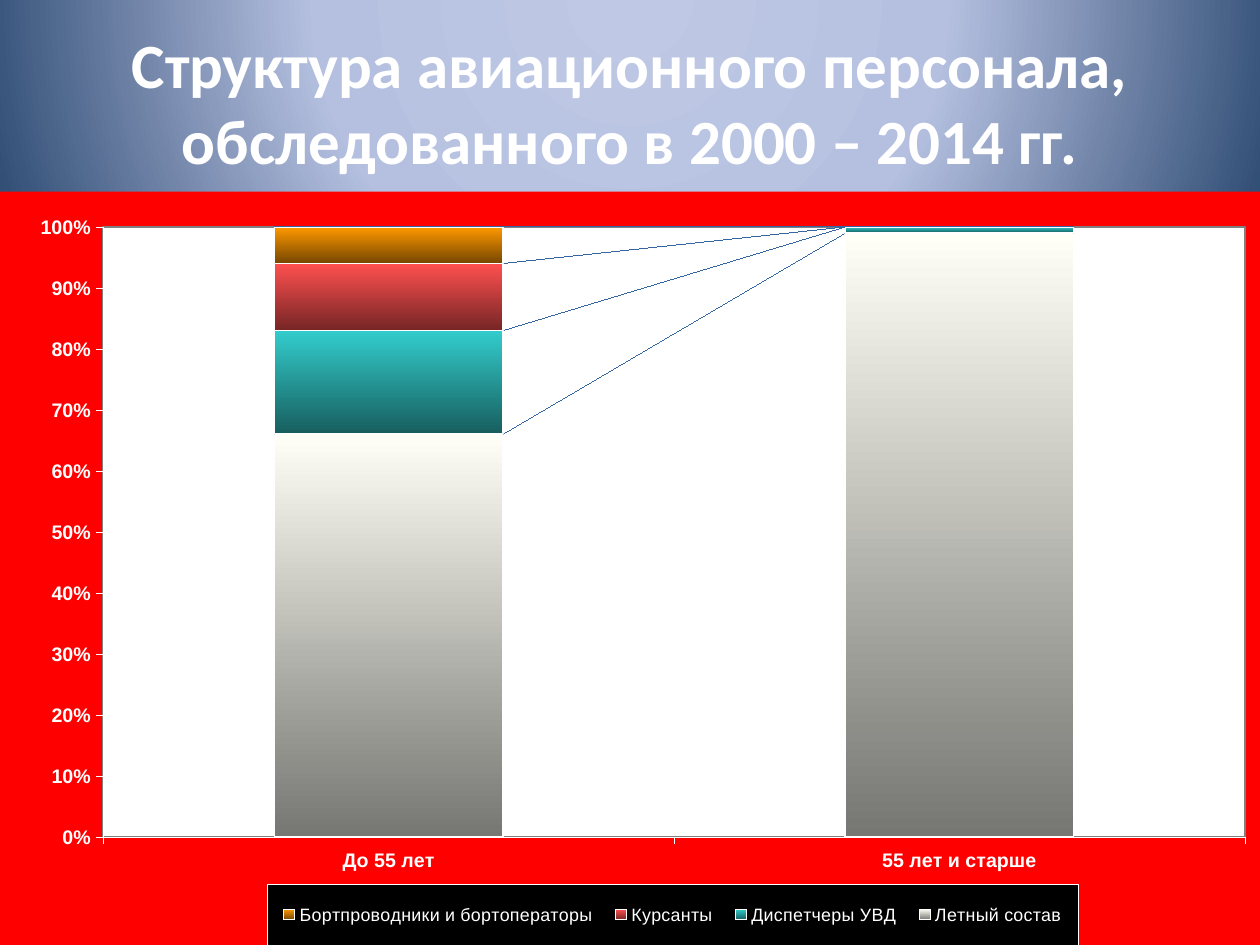
from lxml import etree
from pptx import Presentation
from pptx import util as u
from pptx.chart.data import CategoryChartData
from pptx.dml.color import RGBColor
from pptx.enum import chart as kinds, text
from pptx.oxml import parse_xml
from pptx.oxml.ns import nsdecls, qn

WHITE = RGBColor(0xFF, 0xFF, 0xFF)
BLACK = RGBColor(0, 0, 0)
RED = RGBColor(0xFF, 0, 0)
GRAY = RGBColor(0x80, 0x80, 0x80)
BLUE = RGBColor(0x2A, 0x60, 0xB0)
STAFF = [
    ("Летный состав", (66, 99), RGBColor(0xFF, 0xFF, 0xF7)),
    ("Диспетчеры УВД", (17, 1), RGBColor(0x33, 0xCC, 0xCC)),
    ("Курсанты", (11, 0), RGBColor(0xFF, 0x50, 0x50)),
    ("Бортпроводники и бортоператоры", (6, 0), RGBColor(0xFF, 0x99, 0)),
]


def properties(fill, line=None, width=0.75):
    """Chart shape properties with a given fill and a solid outline."""
    outline = "" if line is None else (
        f'<a:ln w="{u.Pt(width)}"><a:solidFill><a:srgbClr val="{line}"/></a:solidFill></a:ln>')
    return parse_xml(f'<c:spPr {nsdecls("c", "a")}>{fill}{outline}</c:spPr>')


def layout(left, top, width, height, target=""):
    """Manual chart layout in shares of the chart's size."""
    return parse_xml(
        f'<c:layout {nsdecls("c")}><c:manualLayout>{target}'
        '<c:xMode val="edge"/><c:yMode val="edge"/>'
        f'<c:x val="{left}"/><c:y val="{top}"/><c:w val="{width}"/><c:h val="{height}"/>'
        '</c:manualLayout></c:layout>')


deck = Presentation()
deck.slide_width, deck.slide_height = u.Inches(10), u.Inches(7.5)
page = deck.slides.add_slide(deck.slide_layouts[6])

# Radial background
page.background.fill.solid()
background = page.background.fill._xPr
background.replace(background.find(qn("a:solidFill")), parse_xml(
    f'<a:gradFill {nsdecls("a")} rotWithShape="1"><a:gsLst>'
    '<a:gs pos="0"><a:srgbClr val="BFC9E5"/></a:gs>'
    '<a:gs pos="40000"><a:srgbClr val="B5C0E0"/></a:gs>'
    '<a:gs pos="100000"><a:srgbClr val="00234D"/></a:gs></a:gsLst>'
    '<a:path path="circle"><a:fillToRect l="50000" t="-80000" r="50000" b="180000"/></a:path>'
    '</a:gradFill>'))

# Title
title = page.shapes.add_textbox(u.Inches(0.5), u.Inches(0.3), u.Inches(9), u.Inches(1.01))
frame = title.text_frame
frame.word_wrap = True
frame.vertical_anchor = text.MSO_ANCHOR.MIDDLE
frame.text = "Структура авиационного персонала, обследованного в 2000 – 2014 гг."
para = frame.paragraphs[0]
para.alignment = text.PP_ALIGN.CENTER
font = para.runs[0].font
font.name, font.size, font.bold = "Calibri", u.Pt(36), True
font.color.rgb = WHITE

# Stacked chart of staff shares
data = CategoryChartData()
data.categories = ["До 55 лет", "55 лет и старше"]
for name, values, _ in STAFF:
    data.add_series(name, values)
chart = page.shapes.add_chart(
    kinds.XL_CHART_TYPE.COLUMN_STACKED_100, 0, u.Inches(1.52),
    deck.slide_width, u.Inches(5.98), data).chart
chart.has_title = False
chart.font.name, chart.font.size = "Arial", u.Pt(11.2)
chart.font.color.rgb = WHITE

plot = chart.plots[0]
plot.gap_width, plot.overlap = 150, 100
plot.vary_by_categories = False
for series, (_, _, color) in zip(plot.series, STAFF):
    series.format.line.color.rgb = WHITE
    series.format.line.width = u.Pt(1)
    old = series._element.find(qn("c:spPr"))
    series._element.replace(old, properties(
        f'<a:gradFill><a:gsLst><a:gs pos="0"><a:srgbClr val="{color}"/></a:gs>'
        f'<a:gs pos="100000"><a:srgbClr val="{color}"><a:gamma/><a:shade val="46275"/>'
        '<a:invGamma/></a:srgbClr></a:gs></a:gsLst><a:lin ang="5400000" scaled="1"/></a:gradFill>',
        WHITE, 1))

# Lines joining the same series in both columns
joins = etree.Element(qn("c:serLines"))
joins.append(properties("", BLUE, 0.25))
plot._element.find(qn("c:overlap")).addnext(joins)

for axis in (chart.category_axis, chart.value_axis):
    axis.has_major_gridlines = False
    axis.major_tick_mark = kinds.XL_TICK_MARK.OUTSIDE
    axis.minor_tick_mark = kinds.XL_TICK_MARK.NONE
    axis.format.line.color.rgb = WHITE
    axis.format.line.width = u.Pt(0.25)
    label = axis.tick_labels.font
    label.name, label.size, label.bold = "Arial", u.Pt(11.2), True
    label.color.rgb = WHITE
labels = chart.value_axis.tick_labels
labels.number_format, labels.number_format_is_linked = "0%", False

# Red chart ground, white plot and black legend
solid = '<a:solidFill><a:srgbClr val="{}"/></a:solidFill>'
space = chart._chartSpace
space.find(qn("c:chart")).addnext(properties(solid.format(RED)))
area = space.find(qn("c:chart")).find(qn("c:plotArea"))
for old in area.findall(qn("c:layout")):
    area.remove(old)
area.insert(0, layout(0.082, 0.047, 0.906, 0.81, '<c:layoutTarget val="inner"/>'))
area.append(properties(solid.format(WHITE), GRAY, 1))

chart.has_legend = True
legend = chart.legend
legend.position = kinds.XL_LEGEND_POSITION.RIGHT
legend.include_in_layout = False
legend.font.name, legend.font.size = "Arial", u.Pt(10.2)
legend.font.color.rgb = WHITE
key = legend._element
for old in key.findall(qn("c:layout")):
    key.remove(old)
key.find(qn("c:legendPos")).addnext(layout(0.212, 0.92, 0.644, 0.08))
key.find(qn("c:overlay")).addnext(properties(solid.format(BLACK), WHITE, 0.25))

deck.save("out.pptx")
